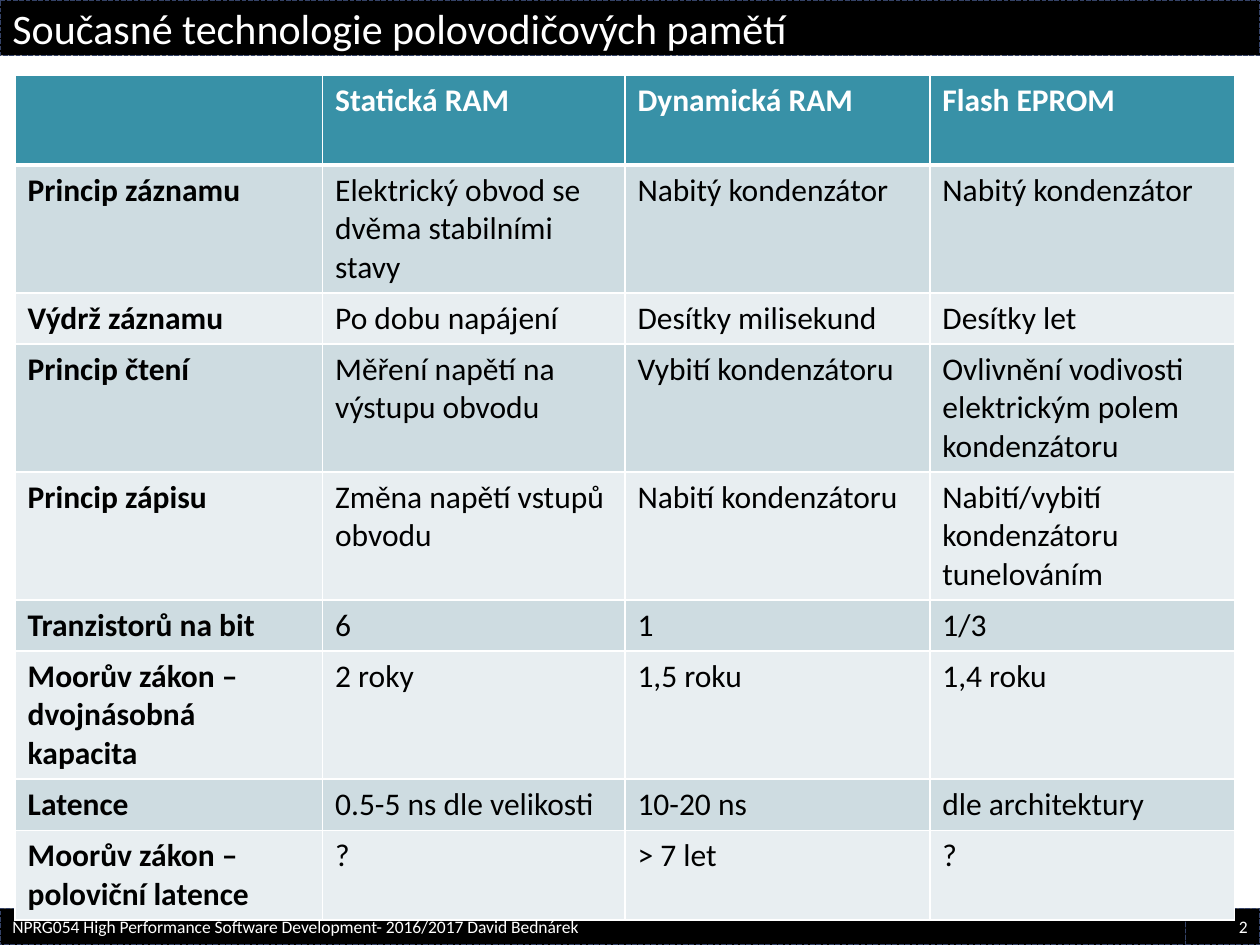
import dataclasses
import pptx
import pptx.dml.color
import pptx.enum.dml
import pptx.enum.shapes
import pptx.enum.text
import pptx.oxml
import pptx.oxml.ns
import pptx.util

ALIGN = pptx.enum.text.PP_ALIGN
UNIT = pptx.util.Inches(0.1)
WIDE, HIGH = 100, 75
FOOT = 72.1
SPLIT = 94.1
COLS = (24.4, 24, 24.2, 24.2)
LINES = (2, 3, 1, 3, 3, 1, 3, 1, 2)
PAD, LEAD = 1, 3.05
HEAD, BANDS = "3891A7", ("CEDCE1", "E8EEF1")
BLACK, WHITE = "000000", "FFFFFF"
ROWS = (
    ("", "Statická RAM", "Dynamická RAM", "Flash EPROM"),
    ("Princip záznamu", "Elektrický obvod se dvěma stabilními stavy",
     "Nabitý kondenzátor", "Nabitý kondenzátor"),
    ("Výdrž záznamu", "Po dobu napájení", "Desítky milisekund", "Desítky let"),
    ("Princip čtení", "Měření napětí na výstupu obvodu", "Vybití kondenzátoru",
     "Ovlivnění vodivosti elektrickým polem kondenzátoru"),
    ("Princip zápisu", "Změna napětí vstupů obvodu", "Nabití kondenzátoru",
     "Nabití/vybití kondenzátoru tunelováním"),
    ("Tranzistorů na bit", "6", "1", "1/3"),
    ("Moorův zákon – dvojnásobná kapacita", "2 roky", "1,5 roku", "1,4 roku"),
    ("Latence", "0.5-5 ns dle velikosti", "10-20 ns", "dle architektury"),
    ("Moorův zákon – poloviční latence", "?", "> 7 let", "?"),
)


@dataclasses.dataclass
class Bar:
    left: float
    top: float
    width: float
    height: float
    text: str
    size: int
    align: ALIGN = ALIGN.LEFT


BARS = (
    Bar(0, 0, WIDE, 4.4, "Současné technologie polovodičových pamětí", 24),
    Bar(SPLIT, FOOT, WIDE - SPLIT, HIGH - FOOT, "2", 10, ALIGN.RIGHT),
    Bar(0, FOOT, SPLIT, HIGH - FOOT,
        "NPRG054 High Performance Software Development- 2016/2017 David Bednárek", 10),
)


def span(count: float) -> int:
    return round(count * UNIT)


def paint(fill, tint: str) -> None:
    fill.solid()
    fill.fore_color.rgb = pptx.dml.color.RGBColor.from_string(tint)


def write(frame, text: str, size: int, tint: str, bold: bool = False) -> None:
    frame.text = text
    for run in frame.paragraphs[0].runs:
        run.font.name = "Calibri"
        run.font.size = pptx.util.Pt(size)
        run.font.bold = bold
        paint(run.font.fill, tint)


def draw_bar(slide, bar: Bar) -> None:
    shape = slide.shapes.add_shape(
        pptx.enum.shapes.MSO_SHAPE.RECTANGLE,
        span(bar.left), span(bar.top), span(bar.width), span(bar.height))
    shape.shadow.inherit = False
    paint(shape.fill, BLACK)
    paint(shape.line.fill, "354368")
    shape.line.width = pptx.util.Pt(0.9)
    shape.line.dash_style = pptx.enum.dml.MSO_LINE.SQUARE_DOT
    frame = shape.text_frame
    frame.word_wrap = True
    frame.vertical_anchor = pptx.enum.text.MSO_ANCHOR.MIDDLE
    write(frame, bar.text, bar.size, WHITE)
    frame.paragraphs[0].alignment = bar.align


def edge(cell, side: str, width: int) -> None:
    space = pptx.oxml.ns.nsdecls("a")
    cell._tc.get_or_add_tcPr().append(pptx.oxml.parse_xml(
        f'<a:ln{side} {space} w="{pptx.util.Pt(width)}"><a:solidFill>'
        f'<a:srgbClr val="{WHITE}"/></a:solidFill></a:ln{side}>'))


def draw_cell(cell, text: str, row: int, col: int) -> None:
    head = row == 0
    for side in "LRTB":
        thick = (row, side) in ((0, "B"), (1, "T"))
        edge(cell, side, 3 if thick else 1)
    paint(cell.fill, HEAD if head else BANDS[(row - 1) % 2])
    write(cell.text_frame, text, 18, WHITE if head else BLACK, head or col == 0)
    if not text:
        cell.text_frame.paragraphs[0].font.size = pptx.util.Pt(18)


def draw_table(slide) -> None:
    tall = [PAD + LEAD * count for count in LINES]
    table = slide.shapes.add_table(
        len(ROWS), len(COLS), span(1.2), span(6),
        span(sum(COLS)), span(sum(tall))).table
    for col, width in zip(table.columns, COLS):
        col.width = span(width)
    for row, height in zip(table.rows, tall):
        row.height = span(height)
    for r, texts in enumerate(ROWS):
        for c, text in enumerate(texts):
            draw_cell(table.cell(r, c), text, r, c)


def main() -> None:
    deck = pptx.Presentation()
    deck.slide_width, deck.slide_height = span(WIDE), span(HIGH)
    slide = deck.slides.add_slide(deck.slide_layouts[6])
    for bar in BARS:
        draw_bar(slide, bar)
    draw_table(slide)
    deck.save("out.pptx")


if __name__ == "__main__":
    main()
